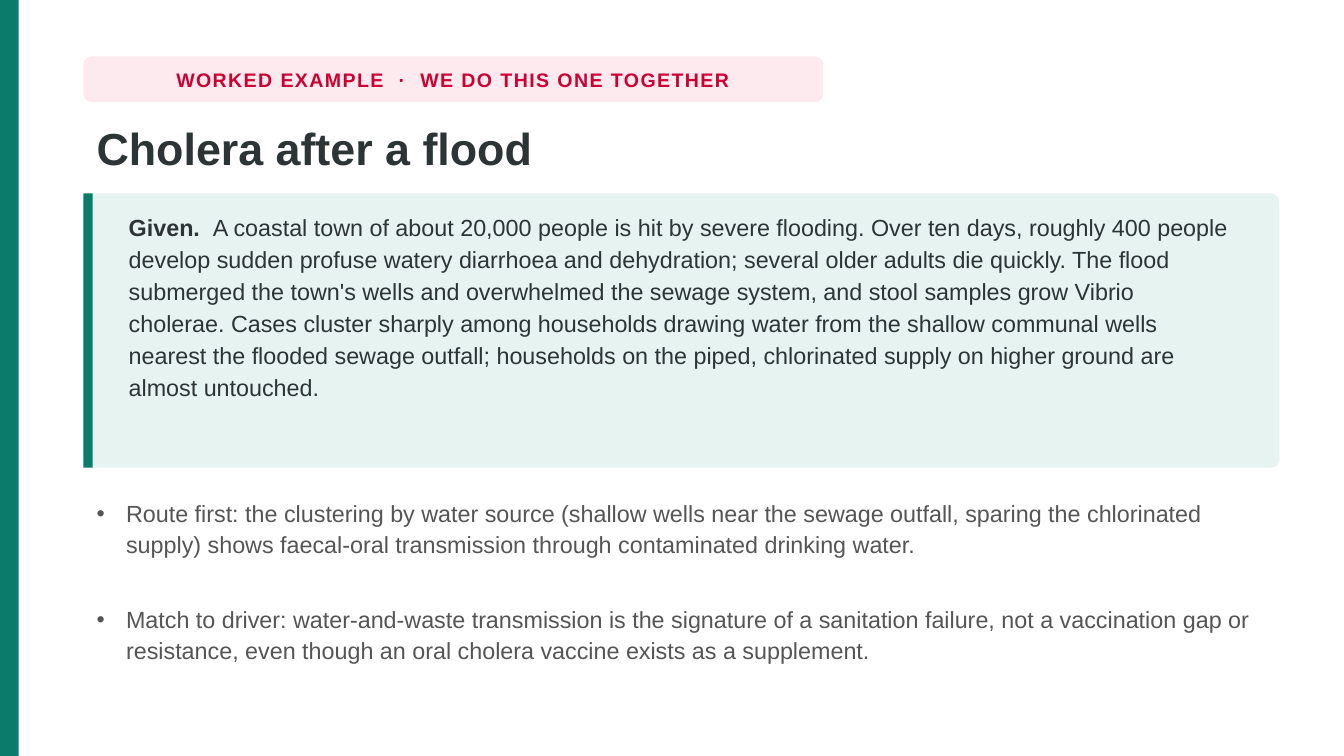
from dataclasses import dataclass, replace
from typing import Optional

import pptx
import pptx.dml.color
import pptx.enum.shapes
import pptx.enum.text
import pptx.oxml
import pptx.oxml.ns
import pptx.util

COLORS = {
    "teal": "0B7B6B",
    "mint": "E6F3F0",
    "blush": "FDEAEF",
    "crimson": "CC0033",
    "ink": "2D3436",
    "gray": "555555",
}
FONT = "Arial"
WIDTH, HEIGHT = pptx.util.Pt(720), pptx.util.Pt(405)
COLUMNS, ROWS = 1000, 562.5
MARGIN, CONTENT_COLUMNS = 62, 890
BULLET_TOP, BULLET_PITCH = 364, 79
SHAPES = pptx.enum.shapes.MSO_SHAPE


@dataclass(frozen=True)
class Area:
    column: float
    row: float
    columns: float
    rows: float

    def emu(self) -> tuple[int, int, int, int]:
        cell_width, cell_height = WIDTH / COLUMNS, HEIGHT / ROWS
        return (
            round(self.column * cell_width),
            round(self.row * cell_height),
            round(self.columns * cell_width),
            round(self.rows * cell_height),
        )


@dataclass(frozen=True)
class Panel:
    area: Area
    color: str
    rounding: Optional[float] = None


@dataclass(frozen=True)
class Words:
    text: str
    bold: bool = False


@dataclass(frozen=True)
class Passage:
    area: Area
    words: tuple[Words, ...]
    size: float
    color: str
    line_spacing: Optional[float] = None
    tracking: Optional[float] = None
    badge: bool = False
    bullet: bool = False


def rgb(color: str) -> pptx.dml.color.RGBColor:
    return pptx.dml.color.RGBColor.from_string(COLORS[color])


def draw_panel(slide: pptx.slide.Slide, panel: Panel) -> None:
    kind = SHAPES.RECTANGLE if panel.rounding is None else SHAPES.ROUNDED_RECTANGLE
    shape = slide.shapes.add_shape(kind, *panel.area.emu())
    if panel.rounding is not None:
        shape.adjustments[0] = panel.rounding
    shape.shadow.inherit = False
    shape.fill.solid()
    shape.fill.fore_color.rgb = rgb(panel.color)
    shape.line.fill.background()


def add_bullet(paragraph: pptx.text.text._Paragraph, size: float) -> None:
    properties = paragraph._p.get_or_add_pPr()
    indent = pptx.util.Inches(0.22)
    properties.set("marL", str(indent))
    properties.set("indent", str(-indent))
    namespace = pptx.oxml.ns.nsdecls("a")
    for mark in ('buSzPct val="100000"', f'buFont typeface="{FONT}"', 'buChar char="•"'):
        properties.append(pptx.oxml.parse_xml(f"<a:{mark} {namespace}/>"))
    paragraph.font.name = FONT
    paragraph.font.size = pptx.util.Pt(size)


def draw_passage(slide: pptx.slide.Slide, passage: Passage) -> None:
    frame = slide.shapes.add_textbox(*passage.area.emu()).text_frame
    frame.word_wrap = not passage.badge
    paragraph = frame.paragraphs[0]
    if passage.badge:
        frame.vertical_anchor = pptx.enum.text.MSO_ANCHOR.MIDDLE
        paragraph.alignment = pptx.enum.text.PP_ALIGN.CENTER
    if passage.bullet:
        add_bullet(paragraph, passage.size)
    if passage.line_spacing is not None:
        paragraph.line_spacing = passage.line_spacing
    for words in passage.words:
        run = paragraph.add_run()
        run.text = words.text
        run.font.name = FONT
        run.font.size = pptx.util.Pt(passage.size)
        run.font.bold = words.bold
        run.font.color.rgb = rgb(passage.color)
        if passage.tracking is not None:
            run._r.get_or_add_rPr().set("spc", str(round(passage.tracking * 100)))


BADGE = Area(MARGIN, 42, 550.5, 34)
CASE = Area(MARGIN, 144, CONTENT_COLUMNS, 204)

PANELS = (
    Panel(Area(0, 0, 14, ROWS), "teal"),
    Panel(BADGE, "blush", 0.18),
    Panel(CASE, "mint", 0.03),
    Panel(replace(CASE, columns=7), "teal"),
)

HEADINGS = (
    Passage(
        BADGE,
        (Words("WORKED EXAMPLE  ·  WE DO THIS ONE TOGETHER", True),),
        10.5, "crimson", tracking=0.8, badge=True,
    ),
    Passage(
        Area(MARGIN, 84, CONTENT_COLUMNS, 56),
        (Words("Cholera after a flood", True),),
        24, "ink", line_spacing=1.02,
    ),
)

GIVEN = Passage(
    Area(86, 151, 840, 190),
    (
        Words("Given.  ", True),
        Words(
            "A coastal town of about 20,000 people is hit by severe flooding. "
            "Over ten days, roughly 400 people develop sudden profuse watery "
            "diarrhoea and dehydration; several older adults die quickly. "
            "The flood submerged the town's wells and overwhelmed the sewage "
            "system, and stool samples grow Vibrio cholerae. Cases cluster "
            "sharply among households drawing water from the shallow communal "
            "wells nearest the flooded sewage outfall; households on the piped, "
            "chlorinated supply on higher ground are almost untouched."
        ),
    ),
    12.5, "ink", line_spacing=1.14,
)

REASONING = (
    "Route first: the clustering by water source (shallow wells near the sewage "
    "outfall, sparing the chlorinated supply) shows faecal-oral transmission "
    "through contaminated drinking water.",
    "Match to driver: water-and-waste transmission is the signature of a "
    "sanitation failure, not a vaccination gap or resistance, even though an "
    "oral cholera vaccine exists as a supplement.",
)


def main() -> None:
    presentation = pptx.Presentation()
    presentation.slide_width, presentation.slide_height = WIDTH, HEIGHT
    slide = presentation.slides.add_slide(presentation.slide_layouts[6])
    for panel in PANELS:
        draw_panel(slide, panel)
    steps = tuple(
        Passage(
            Area(MARGIN, BULLET_TOP + index * BULLET_PITCH, CONTENT_COLUMNS, 71),
            (Words(step),), 12.5, "gray", line_spacing=1.12, bullet=True,
        )
        for index, step in enumerate(REASONING)
    )
    for passage in (*HEADINGS, GIVEN, *steps):
        draw_passage(slide, passage)
    presentation.save("out.pptx")


if __name__ == "__main__":
    main()
